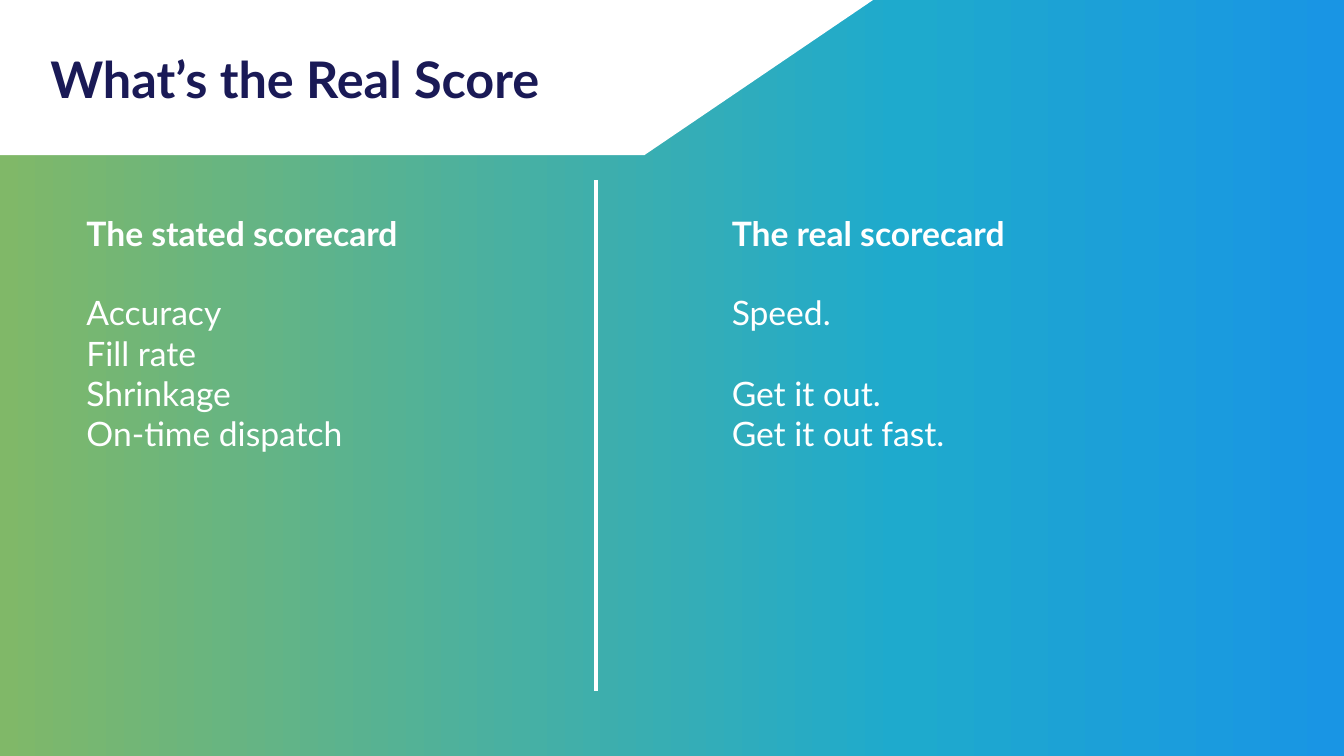
from copy import deepcopy

from pptx import Presentation
from pptx.dml.color import RGBColor
from pptx.enum.shapes import MSO_CONNECTOR
from pptx.enum.text import MSO_ANCHOR
from pptx.oxml.ns import qn
from pptx.oxml.xmlchemy import OxmlElement
from pptx.util import Inches, Pt

THEME = {
    "font": "Lato",
    "white": RGBColor.from_string("FFFFFF"),
    "navy": RGBColor.from_string("1A1A56"),
    "gradient": [(0, "80B868"), (0.67, "1EAACD"), (1, "1995E4")],
    "title": Pt(36),
    "body": Pt(24),
    "line": Pt(28.8),
}


def add_text(s, box, lines, size, color, bold=False, **frame):
    tf = s.shapes.add_textbox(*map(Inches, box)).text_frame
    for name, value in {"word_wrap": True, **frame}.items():
        setattr(tf, name, value)
    style = {"name": THEME["font"], "size": size, "bold": bold}
    for i, (text, spacing) in enumerate(lines):
        p = tf.paragraphs[0] if i == 0 else tf.add_paragraph()
        for name, value in spacing.items():
            setattr(p, name, value)
        r = p.add_run()
        r.text = text
        for name, value in style.items():
            setattr(r.font, name, value)
        r.font.color.rgb = color


prs = Presentation()
prs.slide_width, prs.slide_height = Inches(13.33), Inches(7.5)
s = prs.slides.add_slide(prs.slide_layouts[6])

fill = s.background.fill
fill.gradient()
fill.gradient_angle = 0
stops = s._element.find(".//" + qn("a:gsLst"))
stops.insert(1, deepcopy(stops[0]))
for stop, (position, color) in zip(fill.gradient_stops, THEME["gradient"]):
    stop.position = position
    stop.color.rgb = RGBColor.from_string(color)

outline = [(0, 0), (8.66, 0), (6.39, 1.54), (0, 1.54)]
points = [(Inches(x), Inches(y)) for x, y in outline]
builder = s.shapes.build_freeform(*points[0], scale=1.0)
builder.add_line_segments(points[1:], close=True)
banner = builder.convert_to_shape()
banner.shadow.inherit = False
banner.fill.solid()
banner.fill.fore_color.rgb = THEME["white"]
banner.line.fill.background()

add_text(s, (0.5, 0.17, 6.14, 0.84),
         [("What’s the Real Score", {"line_spacing": Pt(65.3)})],
         THEME["title"], THEME["navy"], bold=True,
         margin_left=0, margin_top=0, margin_right=0, margin_bottom=0)

columns = [
    (0.76, "The stated scorecard",
     [("Accuracy", {}), ("Fill rate", {}), ("Shrinkage", {}), ("On-time dispatch", {})]),
    (7.16, "The real scorecard",
     [("Speed.", {}), ("Get it out.", {"space_before": THEME["line"]}),
      ("Get it out fast.", {})]),
]
for left, heading, lines in columns:
    add_text(s, (left, 1.91, 5.6, 0.8), [(heading, {})], THEME["body"],
             THEME["white"], bold=True, vertical_anchor=MSO_ANCHOR.MIDDLE)
    add_text(s, (left, 2.85, 5.6, 4.27), lines, THEME["body"], THEME["white"])

divider = s.shapes.add_connector(
    MSO_CONNECTOR.STRAIGHT, Inches(5.91), Inches(1.79), Inches(5.91), Inches(6.86))
divider.line.color.rgb = THEME["white"]
divider.line.width = Pt(3)
divider._element.spPr.append(OxmlElement("a:effectLst"))

prs.save("out.pptx")
